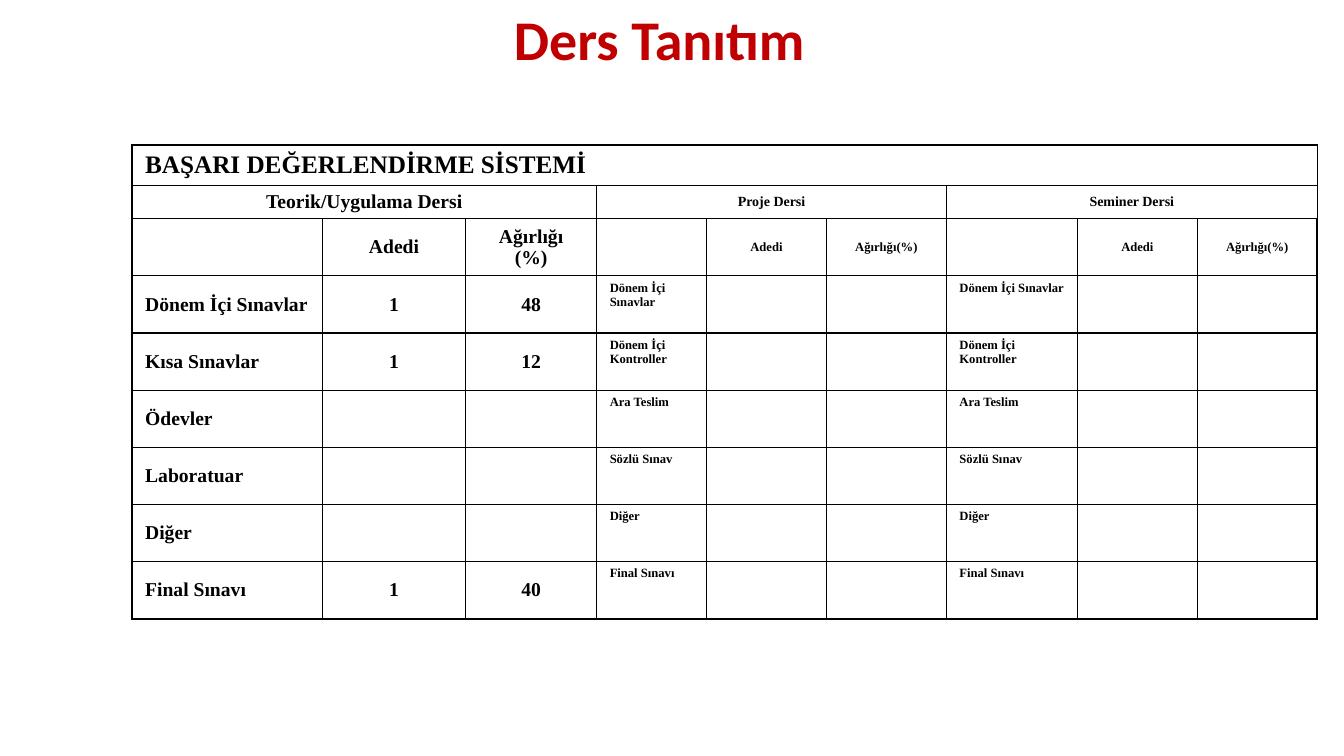
from collections import namedtuple
from dataclasses import dataclass

from lxml.etree import SubElement
from pptx import Presentation
from pptx.dml.color import RGBColor
from pptx.enum.text import MSO_ANCHOR, PP_ALIGN
from pptx.oxml.ns import qn
from pptx.util import Pt

Box = namedtuple("Box", "left top width height")


@dataclass(frozen=True)
class Theme:
    title_color: str = "C00000"
    ink: str = "000000"
    title_font: str = "Calibri"
    table_font: str = "Times New Roman"
    title_size: int = 40
    banner_size: int = 18
    main_size: int = 14
    group_size: int = 10
    small_size: int = 9
    thin: int = 1
    thick: int = 2


THEME = Theme()
TITLE_BOX = Box(110.88, 0, 720, 55.44)
TABLE_BOX = Box(94.32, 103.68, 846.72, 338.4)
COLUMN_WIDTHS = [136.08, 102.24, 93.6, 78.48, 85.68, 85.68, 93.6, 85.68, 85.68]
BANNER_HEIGHT = 28.8
GROUP_HEIGHT = 23.76

BANNER = "BAŞARI DEĞERLENDİRME SİSTEMİ"
GROUPS = ["Teorik/Uygulama Dersi", "Proje Dersi", "Seminer Dersi"]
HEADINGS = ["", "Adedi", "Ağırlığı\n(%)"] + ["", "Adedi", "Ağırlığı(%)"] * 2
ASSESSMENTS = [
    ("Dönem İçi Sınavlar", "1", "48", "Dönem İçi Sınavlar"),
    ("Kısa Sınavlar", "1", "12", "Dönem İçi Kontroller"),
    ("Ödevler", "", "", "Ara Teslim"),
    ("Laboratuar", "", "", "Sözlü Sınav"),
    ("Diğer", "", "", "Diğer"),
    ("Final Sınavı", "1", "40", "Final Sınavı"),
]


def write_text(frame, text, *, font, size, color=THEME.ink, align=PP_ALIGN.LEFT, spacing=None):
    for index, line in enumerate(text.split("\n")):
        para = frame.paragraphs[0] if index == 0 else frame.add_paragraph()
        para.alignment = align
        para.line_spacing = spacing
        span = para.add_run()
        span.text = line
        span.font.name = font
        span.font.size = Pt(size)
        span.font.bold = True
        span.font.color.rgb = RGBColor.from_string(color)


def fill_cell(cell, text, *, size, align=PP_ALIGN.LEFT, anchor=MSO_ANCHOR.MIDDLE):
    if not text:
        return
    cell.vertical_anchor = anchor
    cell.margin_left = cell.margin_right = Pt(9.36)
    cell.margin_top = cell.margin_bottom = Pt(3.6)
    write_text(cell.text_frame, text, font=THEME.table_font, size=size, align=align)


def draw_borders(cell, outer_sides):
    properties = cell._tc.get_or_add_tcPr()
    for side in "LRTB":
        width = THEME.thick if side in outer_sides else THEME.thin
        line = SubElement(properties, qn(f"a:ln{side}"), w=str(Pt(width)))
        fill = SubElement(line, qn("a:solidFill"))
        SubElement(fill, qn("a:srgbClr"), val=THEME.ink)


def style_grid(table):
    last_row, last_column = len(table.rows) - 1, len(table.columns) - 1
    for row in range(last_row + 1):
        for column in range(last_column + 1):
            cell = table.cell(row, column)
            edges = {"L": column == 0, "R": column == last_column,
                     "T": row == 0, "B": row == last_row}
            draw_borders(cell, [side for side, outer in edges.items() if outer])
            cell.fill.background()
            cell.margin_top = cell.margin_bottom = 0


def add_title(page, box):
    frame = page.shapes.add_textbox(*map(Pt, box)).text_frame
    frame.word_wrap = True
    frame.vertical_anchor = MSO_ANCHOR.BOTTOM
    write_text(frame, "Ders Tanıtım", font=THEME.title_font, size=THEME.title_size,
               color=THEME.title_color, align=PP_ALIGN.CENTER, spacing=0.9)


def add_assessment_table(page, box):
    row_count = 3 + len(ASSESSMENTS)
    table = page.shapes.add_table(row_count, len(COLUMN_WIDTHS), *map(Pt, box)).table
    table.first_row = table.horz_banding = False
    for column, width in zip(table.columns, COLUMN_WIDTHS):
        column.width = Pt(width)
    body_height = (box.height - BANNER_HEIGHT - GROUP_HEIGHT) / (row_count - 2)
    heights = [BANNER_HEIGHT, GROUP_HEIGHT] + [body_height] * (row_count - 2)
    for row, height in zip(table.rows, heights):
        row.height = Pt(height)
    style_grid(table)

    table.cell(0, 0).merge(table.cell(0, 8))
    fill_cell(table.cell(0, 0), BANNER, size=THEME.banner_size)
    for index, group in enumerate(GROUPS):
        first = 3 * index
        table.cell(1, first).merge(table.cell(1, first + 2))
        fill_cell(table.cell(1, first), group, align=PP_ALIGN.CENTER,
                  size=THEME.group_size if index else THEME.main_size)
    for column, heading in enumerate(HEADINGS):
        fill_cell(table.cell(2, column), heading, align=PP_ALIGN.CENTER,
                  size=THEME.main_size if column < 3 else THEME.small_size)
    for row, (label, count, weight, stage) in enumerate(ASSESSMENTS, 3):
        fill_cell(table.cell(row, 0), label, size=THEME.main_size)
        for column, value in enumerate((count, weight), 1):
            fill_cell(table.cell(row, column), value, size=THEME.main_size, align=PP_ALIGN.CENTER)
        for column in (3, 6):
            fill_cell(table.cell(row, column), stage, size=THEME.small_size, anchor=MSO_ANCHOR.TOP)


def main():
    deck = Presentation()
    deck.slide_width, deck.slide_height = Pt(960), Pt(540)
    page = deck.slides.add_slide(deck.slide_layouts[6])
    add_assessment_table(page, TABLE_BOX)
    add_title(page, TITLE_BOX)
    deck.save("out.pptx")


if __name__ == "__main__":
    main()
